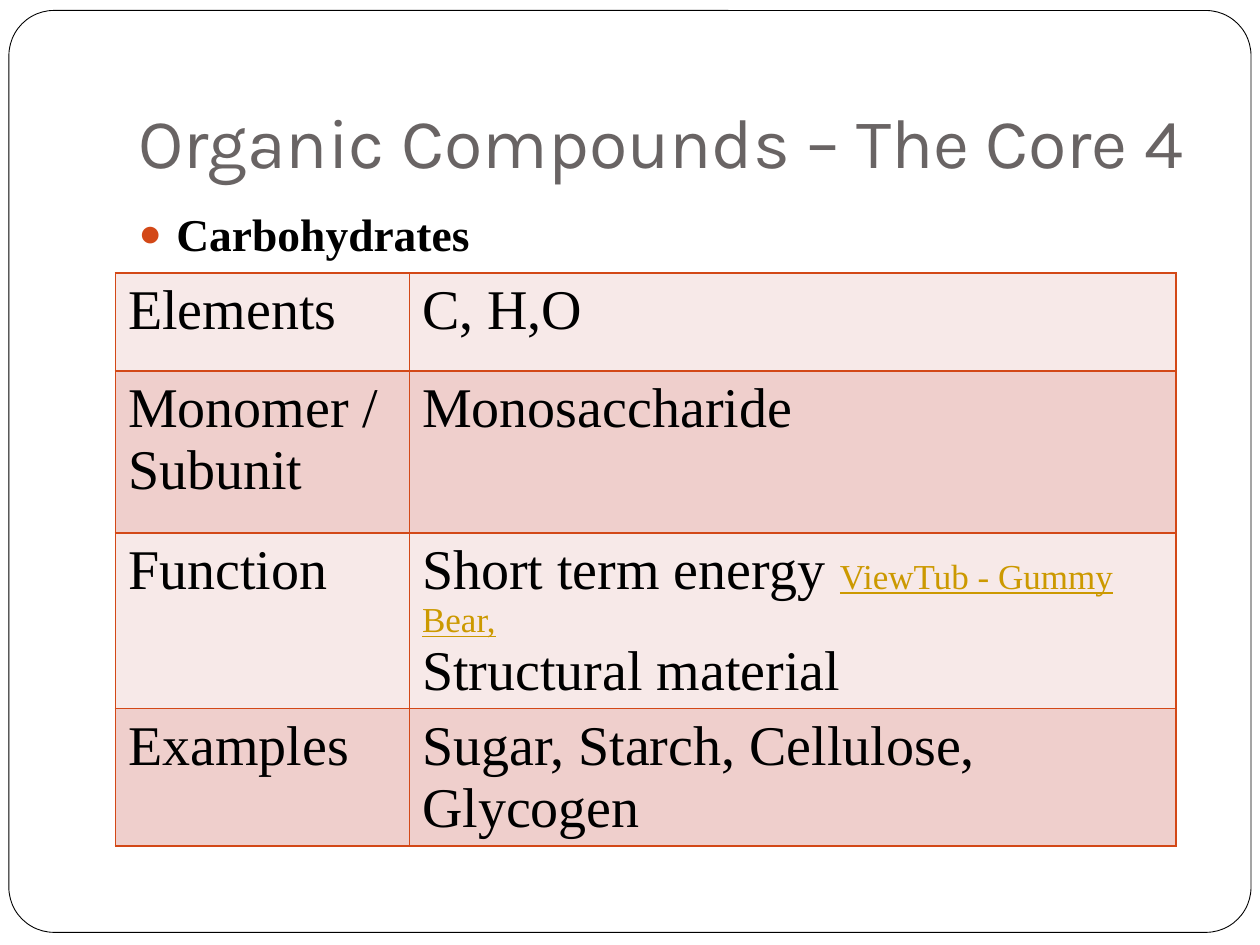
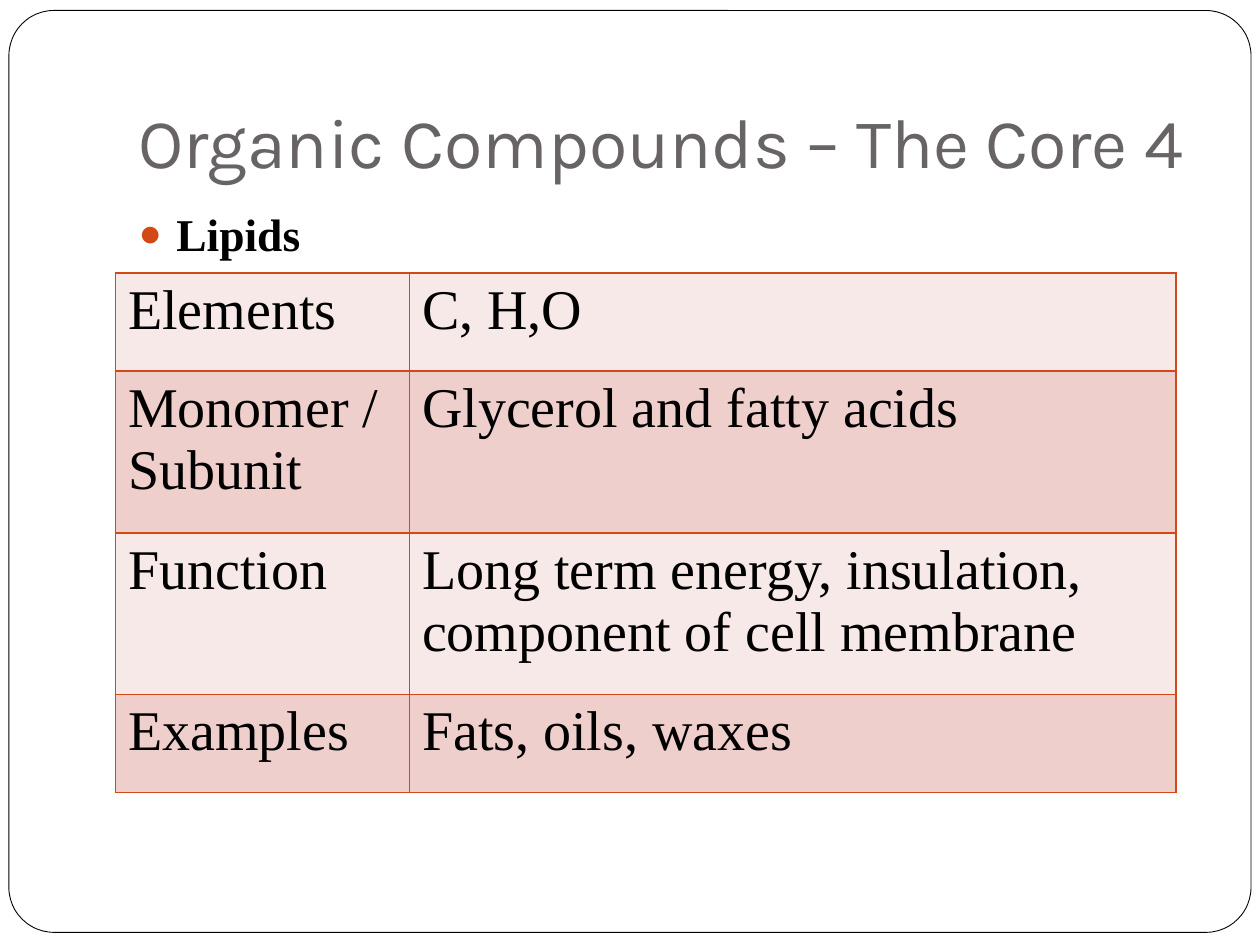
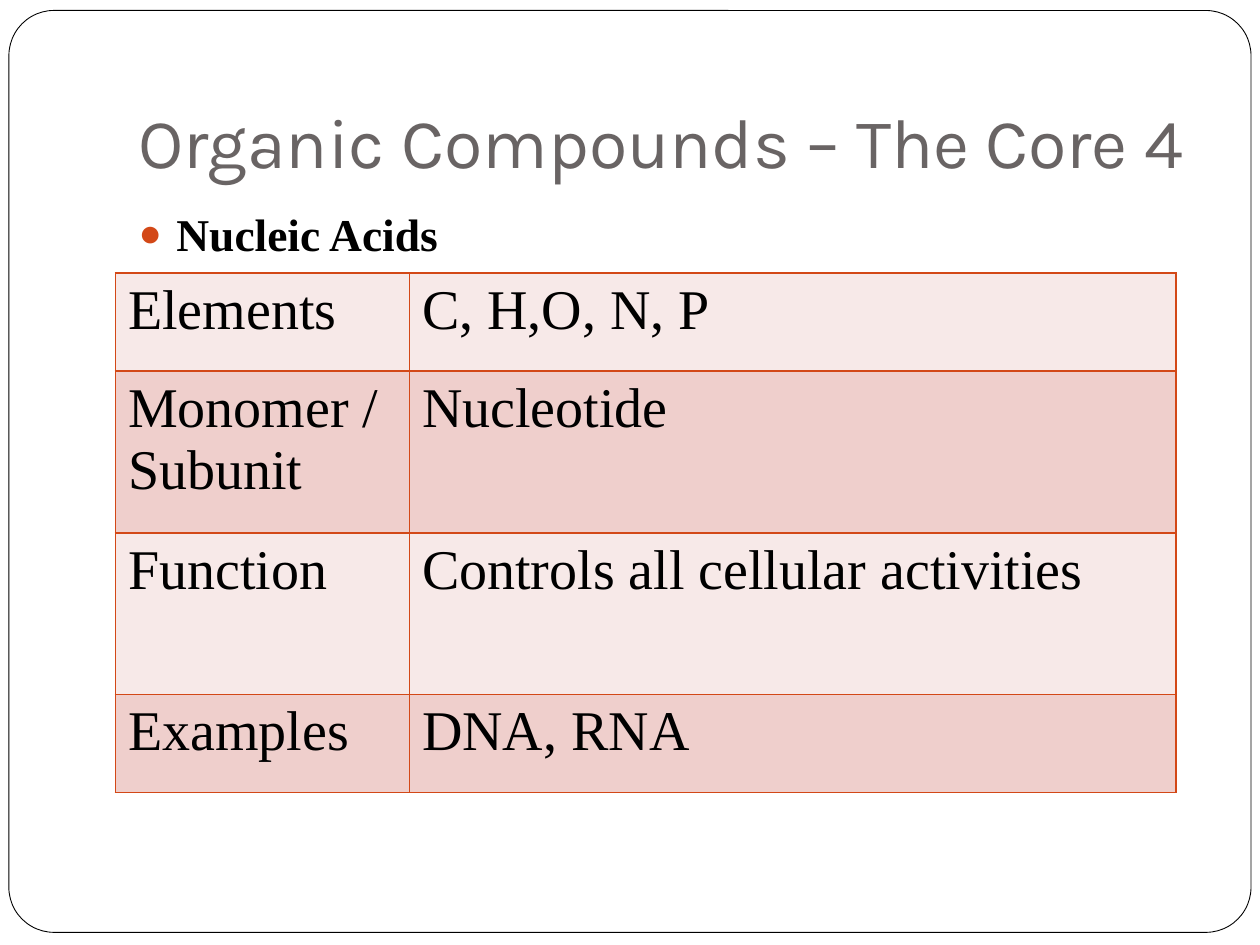
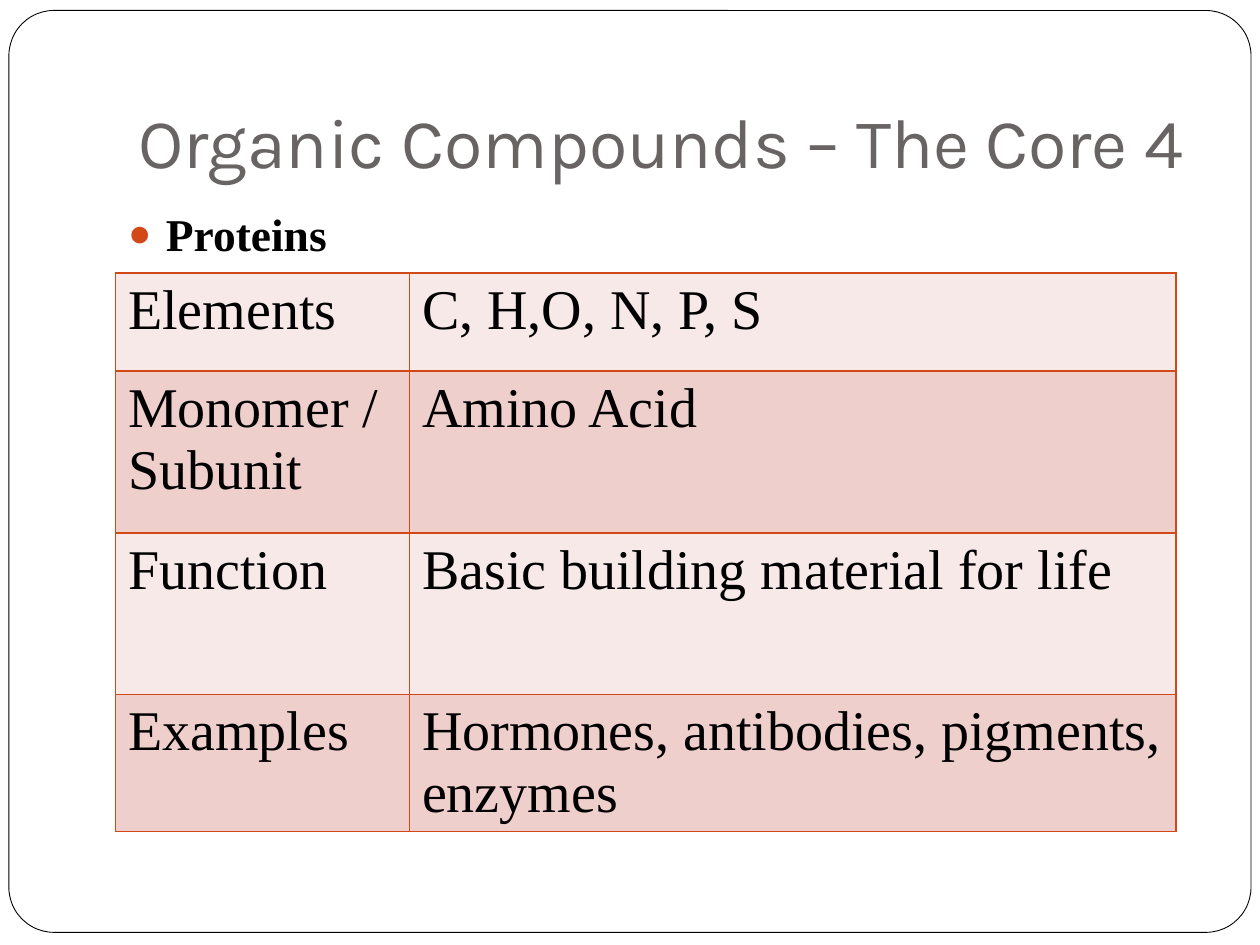
from lxml.etree import SubElement
from pptx import Presentation
from pptx.dml.color import RGBColor
from pptx.enum.shapes import MSO_SHAPE as SHAPE
from pptx.enum.text import MSO_ANCHOR as ANCHOR, MSO_AUTO_SIZE as AUTO_SIZE, PP_ALIGN as ALIGN
from pptx.oxml.ns import qn
from pptx.util import Inches, Pt

COLORS = {
    "paper": "FFFFFF",
    "ink": "000000",
    "title": "696464",
    "accent": "D34817",
    "link": "CC9900",
    "light row": "F7E9E8",
    "dark row": "EFCFCC",
}
TITLE_FONT, BODY_FONT = "Karla", "Times New Roman"

# Each slide: heading, left edge of the heading in grid units, and the four answers.
# An answer is a list of paragraphs, and a paragraph a list of (text, size, color) spans.
LABELS = ["Elements", "Monomer / Subunit", "Function", "Examples"]
ENERGY = [
    [("Short term energy ", 32, "ink"), ("ViewTub - Gummy Bear,", 20, "link")],
    [("Structural material", 32, "ink")],
]
COMPOUNDS = [
    ("Carbohydrates", 12,
     ["C, H,O", "Monosaccharide", ENERGY, "Sugar, Starch, Cellulose, Glycogen"]),
    ("Lipids", 12,
     ["C, H,O", "Glycerol and fatty acids",
      "Long term energy, insulation, component of cell membrane", "Fats, oils, waxes"]),
    ("Nucleic Acids", 12,
     ["C, H,O, N, P", "Nucleotide", "Controls all cellular activities", "DNA, RNA"]),
    ("Proteins", 11,
     ["C, H,O, N, P, S", "Amino Acid", "Basic building material for life",
      "Hormones, antibodies, pigments, enzymes"]),
]
COLUMN_WIDTHS = [28, 73]
ROW_HEIGHTS = [9.35, 15.4, 15.4, 9.35]


def grid(*units):
    """Lengths on a grid of 120 columns by 90 rows, 12 to the inch."""
    return [Inches(unit / 12) for unit in units]


def add_span(para, text, size, color, font=BODY_FONT, bold=False):
    span = para.add_run()
    span.text = text
    span.font.name, span.font.size, span.font.bold = font, Pt(size), bold
    span.font.color.rgb = RGBColor.from_string(COLORS[color])
    span.font.underline = color == "link"


deck = Presentation()
deck.slide_width, deck.slide_height = grid(120, 90)
layout = deck.slide_layouts[1]

for number, (heading, heading_left, answers) in enumerate(COMPOUNDS):
    page = deck.slides.add_slide(layout)

    # Rounded frame, moved once to the master so that all slides share it
    if number == 0:
        frame = page.shapes.add_shape(SHAPE.ROUNDED_RECTANGLE, *grid(0.85, 1, 118.3, 87.8))
        frame.adjustments[0] = 0.049
        frame.shadow.inherit = False
        frame.fill.solid()
        frame.fill.fore_color.rgb = RGBColor.from_string(COLORS["paper"])
        frame.line.color.rgb = RGBColor.from_string(COLORS["ink"])
        frame.line.width = Pt(0.5)
        deck.slide_master.shapes._spTree.insert(2, frame._element)

    # Title
    title = page.shapes.title
    title.left, title.top, title.width, title.height = grid(12, 3.6, 102, 15)
    box = title.text_frame
    box.auto_size, box.vertical_anchor = AUTO_SIZE.NONE, ANCHOR.BOTTOM
    box.margin_left = box.margin_right = box.margin_bottom = Inches(0.1)
    box.margin_top = Inches(0.05)
    para = box.paragraphs[0]
    para.alignment = ALIGN.LEFT
    add_span(para, "Organic Compounds – The Core 4", 40, "title", TITLE_FONT)

    # Bulleted heading
    body = page.placeholders[1]
    body.left, body.top, body.width, body.height = grid(heading_left, 19, 102, 60)
    body.text_frame.auto_size = AUTO_SIZE.NONE
    para = body.text_frame.paragraphs[0]
    para.space_before = Pt(5.8)
    add_span(para, heading, 26, "ink", bold=True)
    bullet = para._p.get_or_add_pPr()
    bullet.set("marL", str(Inches(0.3)))
    bullet.set("indent", str(-Inches(0.3)))
    SubElement(SubElement(bullet, qn("a:buClr")), qn("a:srgbClr"), val=COLORS["accent"])
    SubElement(bullet, qn("a:buSzPct"), val="85000")
    SubElement(bullet, qn("a:buChar"), char="●")

    # Table of facts
    area = grid(11, 26, sum(COLUMN_WIDTHS), sum(ROW_HEIGHTS))
    table = page.shapes.add_table(len(LABELS), 2, *area).table
    table.first_row = table.horz_banding = False
    for column, width in zip(table.columns, grid(*COLUMN_WIDTHS)):
        column.width = width
    for row, height in zip(table.rows, grid(*ROW_HEIGHTS)):
        row.height = height

    for row, facts in enumerate(zip(LABELS, answers)):
        for column, fact in enumerate(facts):
            cell = table.cell(row, column)
            paragraphs = [[(fact, 32, "ink")]] if isinstance(fact, str) else fact
            for index, spans in enumerate(paragraphs):
                box = cell.text_frame
                para = box.add_paragraph() if index else box.paragraphs[0]
                for span in spans:
                    add_span(para, *span)

            # Borders go before the fill in the cell's XML
            borders = cell._tc.get_or_add_tcPr()
            for side in ("a:lnL", "a:lnR", "a:lnT", "a:lnB"):
                line = SubElement(borders, qn(side), w=str(Pt(1)))
                SubElement(SubElement(line, qn("a:solidFill")), qn("a:srgbClr"),
                           val=COLORS["accent"])
            cell.fill.solid()
            shade = "dark row" if row % 2 else "light row"
            cell.fill.fore_color.rgb = RGBColor.from_string(COLORS[shade])

deck.save("out.pptx")
